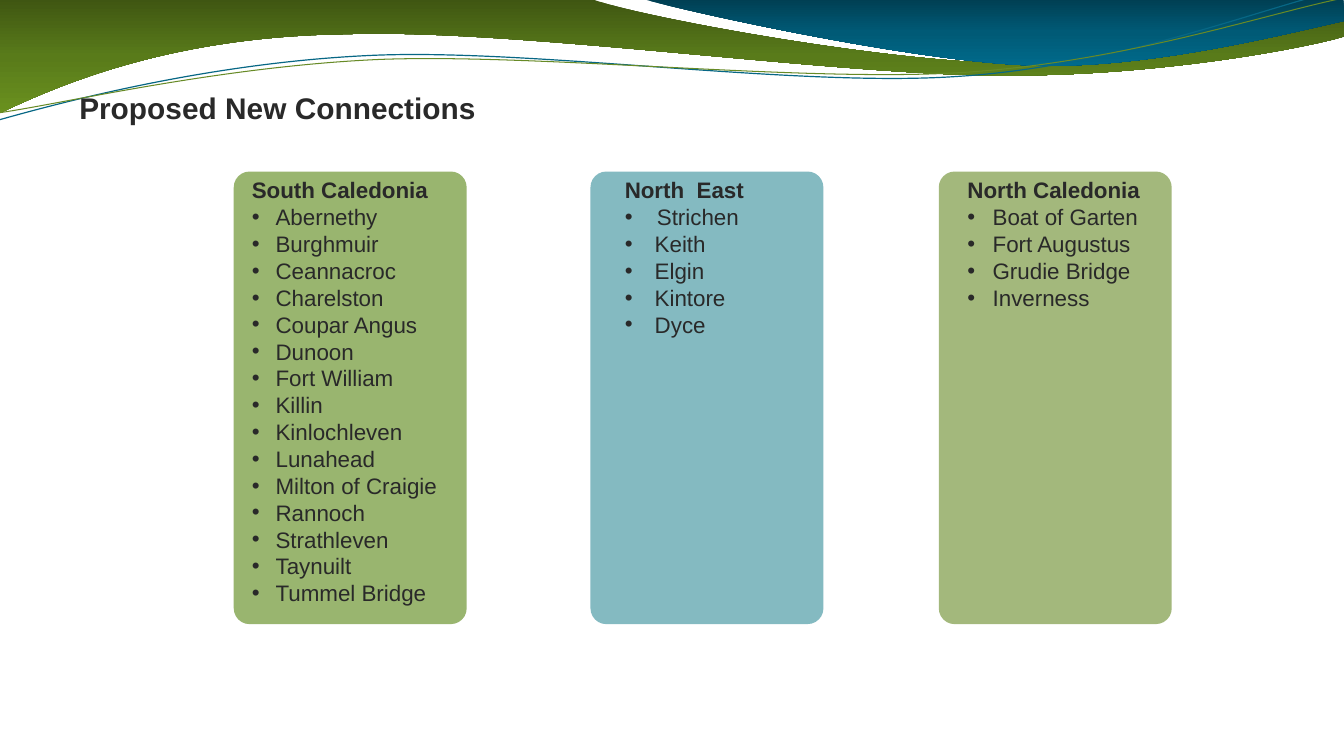
from copy import deepcopy
from dataclasses import dataclass
from math import cos, radians, sin

from lxml import etree
from pptx import Presentation
from pptx.dml.color import RGBColor
from pptx.enum import shapes, text
from pptx.oxml import ns
from pptx.util import Pt

INK = RGBColor(0x29, 0x29, 0x29)
OLIVE = RGBColor(0x67, 0x8A, 0x26)
TEAL = RGBColor(0x32, 0x8C, 0x99)
LEAF = RGBColor(0x56, 0x84, 0x10)
SEA = RGBColor(0x07, 0x67, 0x85)
GREENS = (RGBColor(0x3F, 0x56, 0x12), RGBColor(0x59, 0x7B, 0x1A), RGBColor(0x6A, 0x91, 0x1F))
BLUES = (RGBColor(0x00, 0x3F, 0x53), RGBColor(0x00, 0x5A, 0x76), RGBColor(0x00, 0x6A, 0x8B))
FONT = "Arial"
TOP = 122.5
TILT = 2.7
MID = (480, 42)

Point = tuple[float, float]


@dataclass
class Wave:
    start: Point
    legs: list[tuple[Point, ...]]
    shades: tuple[RGBColor, ...] = ()
    color: RGBColor | None = None
    width: float = 0
    tilt: float = 0


@dataclass
class Column:
    head: str
    names: list[str]
    color: RGBColor
    left: float
    inner: float
    first: float
    rest: float


WAVES = [
    Wave((0, 0), [
        ((422.6, -0.7),),
        ((456.5, 12.2), (636.5, 45.4), (727.9, 45.4)),
        ((818.6, 45.4), (919.4, 18.7), (959.8, 6.5)),
        ((960.5, 25.9),),
        ((943.9, 31.7), (834.5, 54.7), (715.7, 54)),
        ((596.9, 54), (366.5, 20.2), (247, 24.5)),
        ((123.8, 25.9), (43.9, 59.8), (-1.4, 81.4)),
    ], shades=GREENS),
    Wave((459.4, -0.7), [
        ((488.9, 7.9), (654.5, 44.6), (738, 46.8)),
        ((820.8, 49.7), (923, 23), (959.8, 15.1)),
        ((959.8, 0),),
    ], shades=BLUES),
    Wave((-0.7, 85.7), [
        ((45.4, 72.7), (151.2, 44.6), (265.7, 39.6)),
        ((379.4, 34.6), (568.1, 62.6), (683.3, 54.7)),
        ((799.2, 47.5), (900.7, 5.8), (957.6, -7.2)),
    ], color=SEA, width=0.85, tilt=TILT),
    Wave((-0.7, 80.6), [
        ((44.6, 74.2), (157, 47.5), (271.4, 42.5)),
        ((386.6, 38.2), (573.1, 59), (687.6, 51.8)),
        ((802.1, 44.6), (903.6, 10.1), (959.8, -1.4)),
    ], color=OLIVE, width=0.75, tilt=TILT),
]

COLUMNS = [
    Column("South Caledonia", [
        "Abernethy", "Burghmuir", "Ceannacroc", "Charelston", "Coupar Angus",
        "Dunoon", "Fort William", "Killin", "Kinlochleven", "Lunahead",
        "Milton of Craigie", "Rannoch", "Strathleven", "Taynuilt", "Tummel Bridge",
    ], LEAF, 167, 172.8, 17, 17),
    Column("North  East", ["Strichen", "Keith", "Elgin", "Kintore", "Dyce"],
           TEAL, 421.8, 439.2, 23, 21.4),
    Column("North Caledonia", ["Boat of Garten", "Fort Augustus", "Grudie Bridge", "Inverness"],
           OLIVE, 670.6, 684, 18, 18),
]


def spin(dot: Point, tilt: float) -> Point:
    turn = radians(tilt)
    dx, dy = dot[0] - MID[0], dot[1] - MID[1]
    return (Pt(MID[0] + dx * cos(turn) - dy * sin(turn)),
            Pt(MID[1] + dx * sin(turn) + dy * cos(turn)))


def draw_wave(slide, wave: Wave) -> None:
    legs = [[spin(dot, wave.tilt) for dot in leg] for leg in wave.legs]
    maker = slide.shapes.build_freeform(*spin(wave.start, wave.tilt), scale=1.0)
    maker.add_line_segments([leg[-1] for leg in legs], close=bool(wave.shades))
    shape = maker.convert_to_shape()
    for part, leg in zip(shape.element.spPr.findall(".//" + ns.qn("a:lnTo")), legs):
        if len(leg) == 3:
            part.tag = ns.qn("a:cubicBezTo")
            for place, (x, y) in enumerate(leg[:2]):
                knot = etree.Element(ns.qn("a:pt"), x=str(x - shape.left), y=str(y - shape.top))
                part.insert(place, knot)
    shape.rotation = -wave.tilt
    shape.shadow.inherit = False
    if wave.shades:
        shape.line.fill.background()
        shape.fill.gradient()
        shape.fill.gradient_angle = 270
        stop = shape.element.spPr.find(".//" + ns.qn("a:gs"))
        stop.addnext(deepcopy(stop))
        for place, (mark, shade) in enumerate(zip(shape.fill.gradient_stops, wave.shades)):
            mark.position = place / 2
            mark.color.rgb = shade
    else:
        shape.fill.background()
        shape.line.color.rgb = wave.color
        shape.line.width = Pt(wave.width)


def draw_panel(slide, col: Column) -> None:
    panel = slide.shapes.add_shape(shapes.MSO_SHAPE.ROUNDED_RECTANGLE,
                                   Pt(col.left), Pt(TOP), Pt(166.4), Pt(323.3))
    panel.adjustments[0] = 0.068
    panel.shadow.inherit = False
    panel.line.fill.background()
    panel.fill.solid()
    panel.fill.fore_color.rgb = col.color
    tint = panel.element.spPr.find(".//" + ns.qn("a:srgbClr"))
    etree.SubElement(tint, ns.qn("a:alpha"), val="60000")


def add_run(para, words: str, size: float, bold: bool) -> None:
    run = para.add_run()
    run.text = words
    run.font.name = FONT
    run.font.size = Pt(size)
    run.font.bold = bold
    run.font.color.rgb = INK


def add_bullet(para, indent: float) -> None:
    props = para._p.get_or_add_pPr()
    props.set("marL", str(Pt(indent)))
    props.set("indent", str(-Pt(indent)))
    etree.SubElement(props, ns.qn("a:buFont"), typeface=FONT)
    etree.SubElement(props, ns.qn("a:buChar"), char="•")


def draw_list(slide, col: Column) -> None:
    frame = slide.shapes.add_textbox(Pt(col.inner), Pt(TOP), Pt(194.4), Pt(365.8)).text_frame
    frame.word_wrap = True
    para = frame.paragraphs[0]
    para.line_spacing = Pt(19.2)
    add_run(para, col.head, 16, True)
    for row, name in enumerate(col.names):
        para = frame.add_paragraph()
        add_bullet(para, col.rest if row else col.first)
        para.line_spacing = Pt(19.2)
        add_run(para, name, 16, False)


def draw_title(slide) -> None:
    title = slide.shapes.title
    title.left, title.top, title.width, title.height = Pt(56.6), Pt(58), Pt(787.7), Pt(46)
    title.element.getparent().append(title.element)
    frame = title.text_frame
    frame.auto_size = text.MSO_AUTO_SIZE.NONE
    frame.word_wrap = True
    frame.vertical_anchor = text.MSO_ANCHOR.MIDDLE
    frame.margin_left, frame.margin_right = Pt(0), Pt(8)
    frame.margin_top = frame.margin_bottom = Pt(4.3)
    para = frame.paragraphs[0]
    para.alignment = text.PP_ALIGN.LEFT
    para.line_spacing = Pt(17)
    add_run(para, "Proposed New Connections", 21.33, True)


def main() -> None:
    deck = Presentation()
    deck.slide_width, deck.slide_height = Pt(960), Pt(540)
    slide = deck.slides.add_slide(deck.slide_layouts[5])
    for wave in WAVES:
        draw_wave(slide, wave)
    for col in reversed(COLUMNS):
        draw_panel(slide, col)
    draw_title(slide)
    for col in COLUMNS:
        draw_list(slide, col)
    deck.save("out.pptx")


if __name__ == "__main__":
    main()
